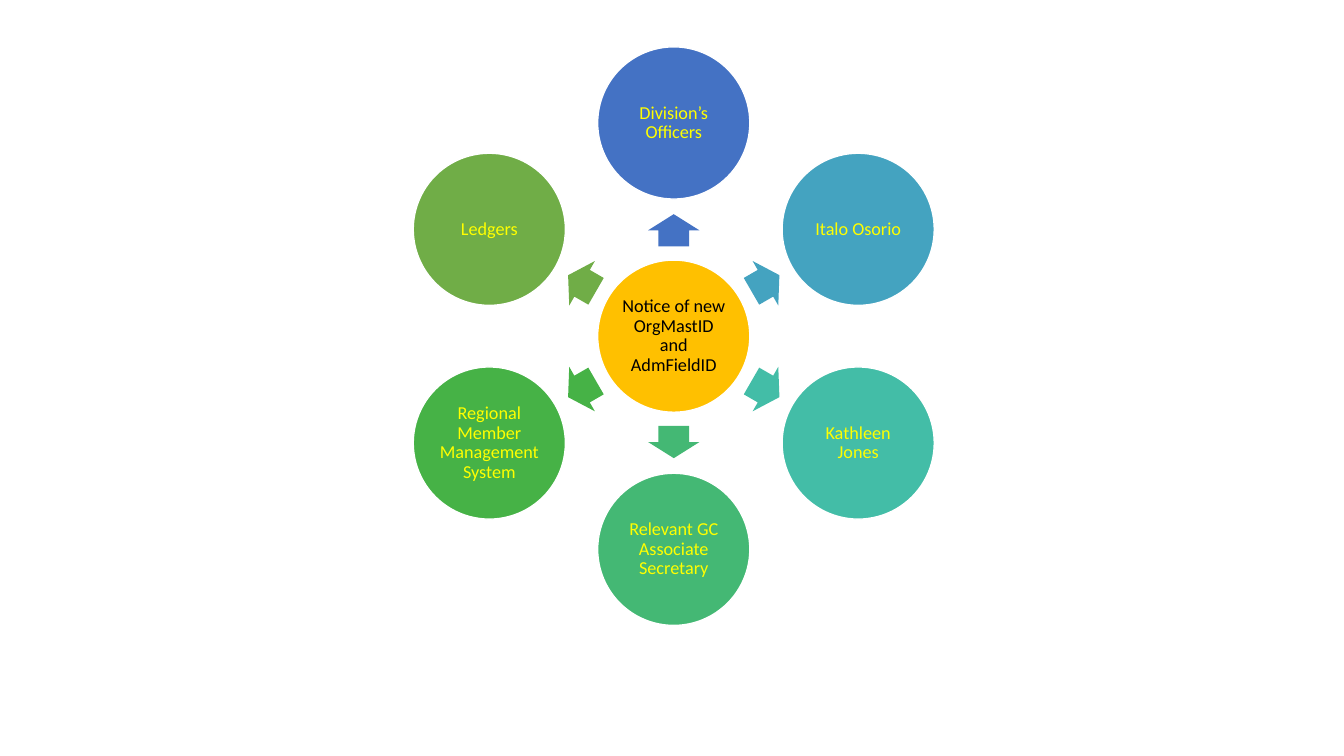
from math import cos, radians, sin

from pptx import Presentation
from pptx import util as u
from pptx.dml.color import RGBColor
from pptx.enum import shapes, text

PX = u.Inches(1) // 200  # 200 px to the inch
HUES = {
    "hub": "FFC000", "blue": "4472C4", "sky": "44A3C0", "teal": "43BDA7",
    "mint": "44B874", "green": "46B246", "olive": "70AD47",
    "black": "000000", "yellow": "FFFF00", "white": "FFFFFF",
}
MID = (1337, 667)
BALL, RING = 302, 423
ARROW, REACH = (64, 102), 210
# Clockwise from the top
NODES = [
    ("Division’s Officers", "blue"),
    ("Italo Osorio", "sky"),
    ("Kathleen Jones", "teal"),
    ("Relevant GC Associate Secretary", "mint"),
    ("Regional Member Management System", "green"),
    ("Ledgers", "olive"),
]


def hue(name):
    return RGBColor.from_string(HUES[name])


def write(shape, words, size=13, color="yellow", font="Calibri", pad=4):
    frame = shape.text_frame
    frame.word_wrap = True
    frame.vertical_anchor = text.MSO_ANCHOR.MIDDLE
    frame.margin_left = frame.margin_right = pad * PX
    frame.margin_top = frame.margin_bottom = pad * PX
    para = frame.paragraphs[0]
    para.text = words
    para.alignment = text.PP_ALIGN.CENTER
    para.line_spacing = 0.9
    para.font.size = u.Pt(size)
    para.font.name = font
    para.font.color.rgb = hue(color)


class Wheel:
    def __init__(self, deck):
        self.slide = deck.slides.add_slide(deck.slide_layouts[6])

    def place(self, kind, wide, high, fill, turn=0, far=0):
        """Add a shape centred at a distance and angle from the hub."""
        x = MID[0] + far * cos(radians(turn)) - wide / 2
        y = MID[1] + far * sin(radians(turn)) - high / 2
        shape = self.slide.shapes.add_shape(
            kind, round(x) * PX, round(y) * PX, wide * PX, high * PX)
        shape.shadow.inherit = False
        shape.fill.solid()
        shape.fill.fore_color.rgb = hue(fill)
        return shape

    def ball(self, words, fill, turn=0, far=0, color="yellow"):
        oval = self.place(shapes.MSO_SHAPE.OVAL, BALL, BALL, fill, turn, far)
        oval.line.color.rgb = hue("white")
        oval.line.width = u.Pt(1)
        write(oval, words, color=color)

    def arrow(self, fill, turn):
        arrow = self.place(
            shapes.MSO_SHAPE.RIGHT_ARROW, *ARROW, fill, turn, REACH)
        arrow.adjustments[0] = 0.6
        arrow.adjustments[1] = 0.5
        arrow.line.fill.background()
        arrow.rotation = turn % 360


def main():
    deck = Presentation()
    deck.slide_width, deck.slide_height = 2667 * PX, 1500 * PX
    wheel = Wheel(deck)

    # Hub
    wheel.ball("Notice of new OrgMastID and AdmFieldID", "hub", color="black")

    # Spokes
    for i, (words, fill) in enumerate(NODES):
        turn = i * 360 // len(NODES) - 90
        wheel.arrow(fill, turn)
        wheel.ball(words, fill, turn, RING)

    deck.save("out.pptx")


if __name__ == "__main__":
    main()
